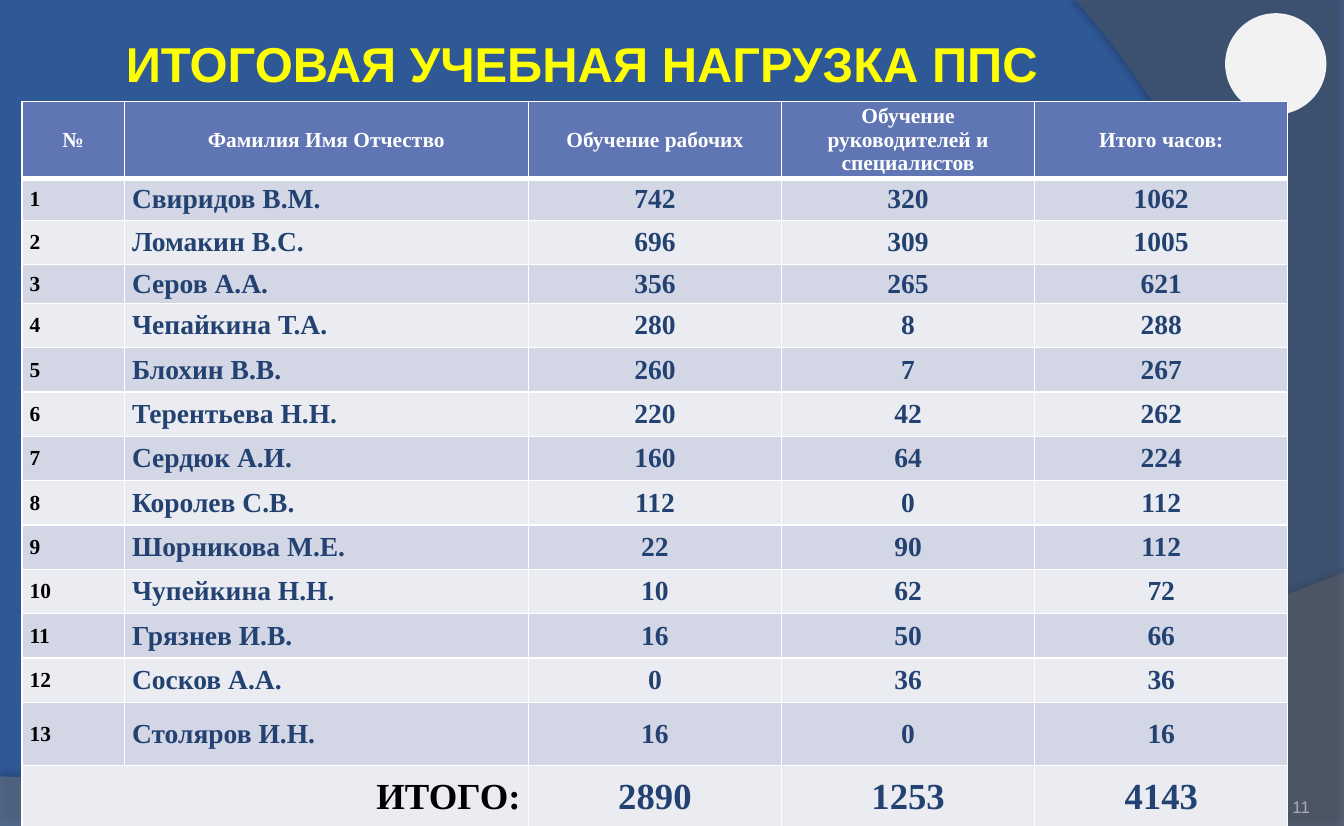
from dataclasses import dataclass
from typing import Any, NamedTuple

from lxml.etree import SubElement
from pptx import Presentation
from pptx.dml.color import RGBColor as Rgb
from pptx.enum.shapes import MSO_SHAPE as Shape
from pptx.enum.text import MSO_ANCHOR as Anchor, PP_ALIGN as Align
from pptx.oxml.ns import qn
from pptx.util import Inches, Pt


@dataclass(frozen=True)
class Theme:
    background: str = "2F5897"
    wave: str = "7F7F7F"
    side: str = "5E5E5E"
    disc: str = "F2F2F2"
    title: str = "FFFF00"
    header: str = "6076B4"
    band_dark: str = "D2D6E5"
    band_light: str = "EAECF2"
    white: str = "FFFFFF"
    black: str = "000000"
    navy: str = "234271"
    page: str = "A9ACB1"
    heading_font: str = "Arial"
    table_font: str = "Times New Roman"
    title_size: int = 32
    total_size: int = 24
    body_size: int = 18
    small_size: int = 14
    page_size: int = 11


class Point(NamedTuple):
    x: float
    y: float


class Box(NamedTuple):
    left: float
    top: float
    width: float
    height: float


class Teacher(NamedTuple):
    name: str
    workers: int
    managers: int


@dataclass(frozen=True)
class TextStyle:
    size: int
    color: str
    font: str
    bold: bool = True
    align: Align = Align.CENTER
    spacing: float = 1.0


@dataclass(frozen=True)
class Backdrop:
    before: tuple[Point, ...]
    curve: tuple[Point, Point, Point, Point]
    color: str
    opacity: int
    shadow_opacity: int
    shadow_distance: float
    shadow_angle: int


THEME = Theme()
WIDTH, HEIGHT = 12.21, 7.5
TITLE = "ИТОГОВАЯ УЧЕБНАЯ НАГРУЗКА ППС"
HEADINGS = ("№", "Фамилия Имя Отчество", "Обучение рабочих",
            "Обучение руководителей и специалистов", "Итого часов:")
TEACHERS = (
    Teacher("Свиридов В.М.", 742, 320),
    Teacher("Ломакин В.С.", 696, 309),
    Teacher("Серов А.А.", 356, 265),
    Teacher("Чепайкина Т.А.", 280, 8),
    Teacher("Блохин В.В.", 260, 7),
    Teacher("Терентьева Н.Н.", 220, 42),
    Teacher("Сердюк А.И.", 160, 64),
    Teacher("Королев С.В.", 112, 0),
    Teacher("Шорникова М.Е.", 22, 90),
    Teacher("Чупейкина Н.Н.", 10, 62),
    Teacher("Грязнев И.В.", 16, 50),
    Teacher("Сосков А.А.", 0, 36),
    Teacher("Столяров И.Н.", 16, 0),
)
COLUMN_WIDTHS = (0.93, 3.67, 2.3, 2.3, 2.3)
TABLE_BOX = Box(0.2, 0.92, sum(COLUMN_WIDTHS), 6.55)
LAST_ROW = len(TEACHERS) + 1
SPECIAL_HEIGHTS = {0: 0.65, 1: 0.38, 3: 0.35, LAST_ROW - 1: 0.57, LAST_ROW: 0.57}
USUAL_HEIGHT = (TABLE_BOX.height - sum(SPECIAL_HEIGHTS.values())) / (LAST_ROW + 1 - len(SPECIAL_HEIGHTS))

HEADER_STYLE = TextStyle(THEME.small_size, THEME.white, THEME.table_font)
NUMBER_STYLE = TextStyle(THEME.small_size, THEME.black, THEME.table_font, align=Align.LEFT)
NAME_STYLE = TextStyle(THEME.body_size, THEME.navy, THEME.table_font, align=Align.LEFT)
HOURS_STYLE = TextStyle(THEME.body_size, THEME.navy, THEME.table_font)
TOTAL_LABEL_STYLE = TextStyle(THEME.total_size, THEME.black, THEME.table_font, align=Align.RIGHT)
TOTAL_STYLE = TextStyle(THEME.total_size, THEME.navy, THEME.table_font)
TITLE_STYLE = TextStyle(THEME.title_size, THEME.title, THEME.heading_font, spacing=0.8)
PAGE_STYLE = TextStyle(THEME.page_size, THEME.page, THEME.heading_font, bold=False, align=Align.RIGHT)

BACKDROPS = (
    Backdrop((Point(0, 7.05), Point(0, HEIGHT), Point(WIDTH, HEIGHT)),
             (Point(WIDTH, 5.2), Point(6.82, 7.29), Point(4.77, 7.19), Point(0, 7.05)),
             THEME.wave, 45, 35, 3.5, 270),
    Backdrop((Point(WIDTH, 0), Point(WIDTH, HEIGHT)),
             (Point(10.03, HEIGHT), Point(11.41, 6.19), Point(12.42, 3), Point(9.77, 0)),
             THEME.side, 40, 45, 4, 180),
)


def apply(target: Any, values: dict[str, Any]) -> None:
    for name, value in values.items():
        setattr(target, name, value)


def paint(target: Any, color: str) -> None:
    target.fill.solid()
    target.fill.fore_color.rgb = Rgb.from_string(color)


def write(frame: Any, text: str, style: TextStyle) -> None:
    paragraph = frame.paragraphs[0]
    run = paragraph.add_run()
    run.text = text
    apply(paragraph, {"alignment": style.align, "line_spacing": style.spacing})
    apply(run.font, {"size": Pt(style.size), "bold": style.bold, "name": style.font})
    run.font.color.rgb = Rgb.from_string(style.color)


def bezier(curve: tuple[Point, Point, Point, Point], steps: int = 48) -> list[Point]:
    weights = [((1 - t) ** 3, 3 * t * (1 - t) ** 2, 3 * t * t * (1 - t), t ** 3)
               for t in (step / steps for step in range(steps + 1))]
    return [Point(sum(w * p.x for w, p in zip(row, curve)),
                  sum(w * p.y for w, p in zip(row, curve))) for row in weights]


def add_backdrop(slide: Any, backdrop: Backdrop) -> None:
    outline = [(Inches(p.x), Inches(p.y)) for p in (*backdrop.before, *bezier(backdrop.curve))]
    builder = slide.shapes.build_freeform(*outline[0])
    builder.add_line_segments(outline[1:], close=True)
    area = builder.convert_to_shape()
    paint(area, backdrop.color)
    area.line.fill.background()
    area.shadow.inherit = False
    properties = area._element.spPr
    fill_color = properties.find(qn("a:solidFill"))[0]
    SubElement(fill_color, qn("a:alpha"), val=str(backdrop.opacity * 1000))
    shadow = SubElement(properties.find(qn("a:effectLst")), qn("a:outerShdw"),
                        blurRad=str(Pt(4)), dist=str(Pt(backdrop.shadow_distance)),
                        dir=str(backdrop.shadow_angle * 60000), algn="ctr", rotWithShape="0")
    shadow_color = SubElement(shadow, qn("a:srgbClr"), val=THEME.black)
    SubElement(shadow_color, qn("a:alpha"), val=str(backdrop.shadow_opacity * 1000))


def add_label(slide: Any, box: Box, text: str, style: TextStyle, anchor: Anchor) -> None:
    frame = slide.shapes.add_textbox(*map(Inches, box)).text_frame
    apply(frame, {"word_wrap": True, "vertical_anchor": anchor, "margin_left": 0,
                  "margin_right": 0, "margin_top": 0, "margin_bottom": 0})
    write(frame, text, style)


def format_cell(cell: Any, row: int) -> None:
    apply(cell, {"vertical_anchor": Anchor.MIDDLE, "margin_left": Inches(0.07),
                 "margin_right": Inches(0.07), "margin_top": 0, "margin_bottom": 0})
    properties = cell._tc.get_or_add_tcPr()
    widths = {"lnL": 1, "lnR": 1, "lnT": 3 if row == 1 else 1, "lnB": 3 if row == 0 else 1}
    for side, width in widths.items():
        border = SubElement(properties, qn(f"a:{side}"), w=str(Pt(width)))
        SubElement(SubElement(border, qn("a:solidFill")), qn("a:srgbClr"), val=THEME.white)
    band = THEME.band_dark if row % 2 else THEME.band_light
    paint(cell, band if row else THEME.header)


def add_workload(slide: Any) -> None:
    table = slide.shapes.add_table(LAST_ROW + 1, len(HEADINGS), *map(Inches, TABLE_BOX)).table
    for column, width in zip(table.columns, COLUMN_WIDTHS):
        column.width = Inches(width)
    workers = sum(t.workers for t in TEACHERS)
    managers = sum(t.managers for t in TEACHERS)
    rows = [HEADINGS,
            *((i, t.name, t.workers, t.managers, t.workers + t.managers)
              for i, t in enumerate(TEACHERS, 1)),
            ("ИТОГО:", "", workers, managers, workers + managers)]
    styles = {0: (HEADER_STYLE,) * 5, LAST_ROW: (TOTAL_LABEL_STYLE,) * 2 + (TOTAL_STYLE,) * 3}
    body_styles = (NUMBER_STYLE, NAME_STYLE) + (HOURS_STYLE,) * 3
    for r, values in enumerate(rows):
        table.rows[r].height = Inches(SPECIAL_HEIGHTS.get(r, USUAL_HEIGHT))
        for c, (value, style) in enumerate(zip(values, styles.get(r, body_styles))):
            cell = table.cell(r, c)
            format_cell(cell, r)
            if value != "":
                write(cell.text_frame, str(value), style)
    table.cell(LAST_ROW, 0).merge(table.cell(LAST_ROW, 1))


def main() -> None:
    deck = Presentation()
    apply(deck, {"slide_width": Inches(WIDTH), "slide_height": Inches(HEIGHT)})
    slide = deck.slides.add_slide(deck.slide_layouts[6])
    paint(slide.background, THEME.background)
    for backdrop in BACKDROPS:
        add_backdrop(slide, backdrop)
    disc = slide.shapes.add_shape(Shape.OVAL, *map(Inches, Box(11.13, 0.12, 0.92, 0.92)))
    paint(disc, THEME.disc)
    disc.line.fill.background()
    disc.shadow.inherit = False
    add_label(slide, Box(0, 0.3, 10.58, 0.64), TITLE, TITLE_STYLE, Anchor.MIDDLE)
    add_workload(slide)
    add_label(slide, Box(10.88, 7.02, 1.02, 0.4), "11", PAGE_STYLE, Anchor.BOTTOM)
    deck.save("out.pptx")


if __name__ == "__main__":
    main()
